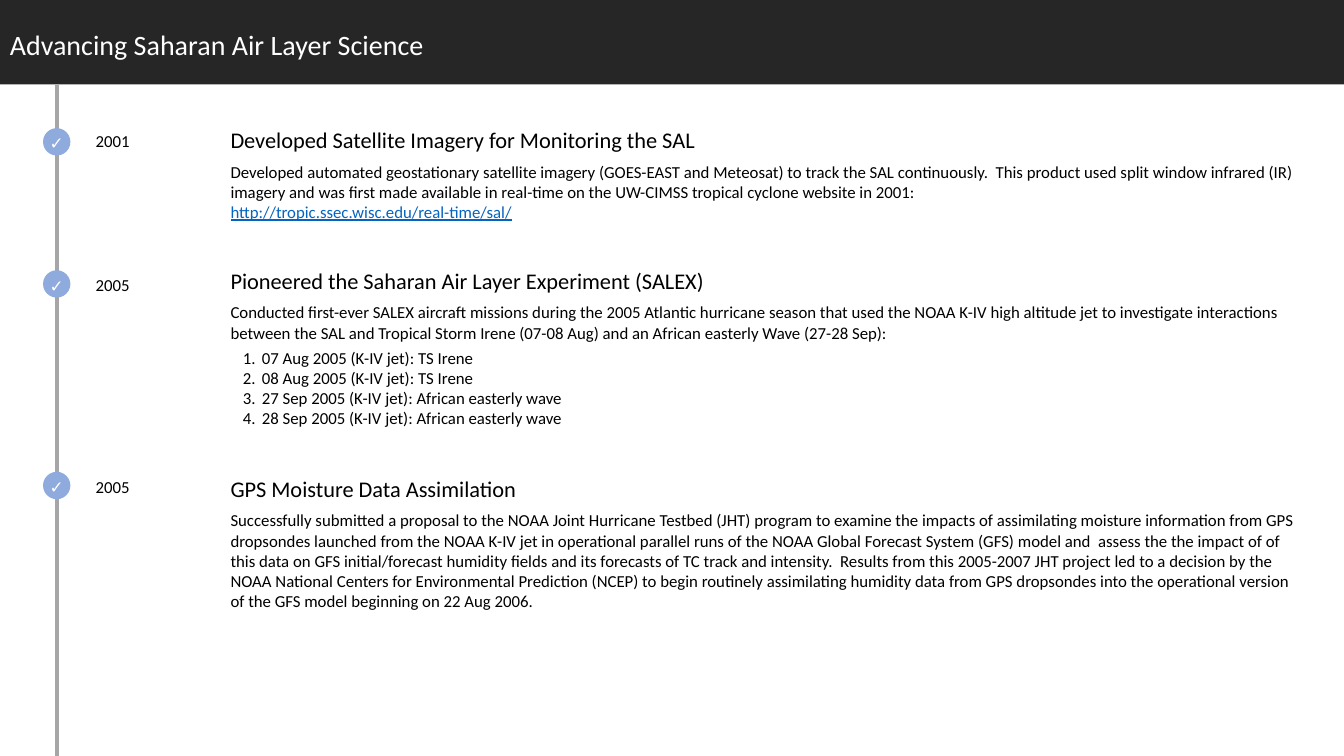
from pptx import Presentation
from pptx.dml.color import RGBColor
from pptx.enum.shapes import MSO_CONNECTOR, MSO_SHAPE
from pptx.enum.text import MSO_ANCHOR, PP_ALIGN
from pptx.oxml.ns import qn
from pptx.util import Cm, Pt
from lxml.etree import SubElement

TITLE = "Advancing Saharan Air Layer Science"

# top, height: story box; marker, year_top: tops of the dot and the year (cm)
MILESTONES = [
    dict(year="2001", top=3.05, height=2.69, marker=3.23, year_top=3.18,
         heading="Developed Satellite Imagery for Monitoring the SAL",
         body="Developed automated geostationary satellite imagery (GOES-EAST and Meteosat) "
              "to track the SAL continuously.  This product used split window infrared (IR) "
              "imagery and was first made available in real-time on the UW-CIMSS tropical "
              "cyclone website in 2001:",
         web="http://tropic.ssec.wisc.edu/real-time/sal/", missions=[]),
    dict(year="2005", top=6.6, height=4.37, marker=6.81, year_top=6.81,
         heading="Pioneered the Saharan Air Layer Experiment (SALEX)",
         body="Conducted first-ever SALEX aircraft missions during the 2005 Atlantic hurricane "
              "season that used the NOAA K-IV high altitude jet to investigate interactions "
              "between the SAL and Tropical Storm Irene (07-08 Aug) and an African easterly "
              "Wave (27-28 Sep):",
         web=None,
         missions=["07 Aug 2005 (K-IV jet): TS Irene",
                   "08 Aug 2005 (K-IV jet): TS Irene",
                   "27 Sep 2005 (K-IV jet): African easterly wave",
                   "28 Sep 2005 (K-IV jet): African easterly wave"]),
    dict(year="2005", top=11.84, height=3.71, marker=11.89, year_top=11.89,
         heading="GPS Moisture Data Assimilation",
         body="Successfully submitted a proposal to the NOAA Joint Hurricane Testbed (JHT) "
              "program to examine the impacts of assimilating moisture information from GPS "
              "dropsondes launched from the NOAA K-IV jet in operational parallel runs of the "
              "NOAA Global Forecast System (GFS) model and  assess the the impact of of this "
              "data on GFS initial/forecast humidity fields and its forecasts of TC track and "
              "intensity.  Results from this 2005-2007 JHT project led to a decision by the "
              "NOAA National Centers for Environmental Prediction (NCEP) to begin routinely "
              "assimilating humidity data from GPS dropsondes into the operational version of "
              "the GFS model beginning on 22 Aug 2006.",
         web=None, missions=[]),
]

THEME = dict(
    font="Calibri",
    header=RGBColor(0x26, 0x26, 0x26), white=RGBColor(0xFF, 0xFF, 0xFF),
    text=RGBColor(0, 0, 0), web=RGBColor(0x05, 0x63, 0xC1),
    dot=RGBColor(0x8F, 0xAA, 0xDC), rail=RGBColor(0xA6, 0xA6, 0xA6),
    title_size=Pt(20), heading_size=Pt(16), body_size=Pt(12),
)

SLIDE_W, SLIDE_H, HEADER_H = 33.87, 19.05, 2.13
RAIL_X, DOT = 1.43, 0.69
YEAR_X, YEAR_W, YEAR_H = 2.16, 1.4, 0.76
STORY_X, STORY_W = 5.56, 27.66


def add_run(p, text, size="body_size", color="text", underline=None):
    r = p.add_run()
    r.text = text
    r.font.name = THEME["font"]
    r.font.size = THEME[size]
    r.font.color.rgb = THEME[color]
    r.font.underline = underline


def add_panel(kind, x, y, w, h, fill):
    sp = s.shapes.add_shape(kind, Cm(x), Cm(y), Cm(w), Cm(h))
    sp.shadow.inherit = False
    sp.fill.solid()
    sp.fill.fore_color.rgb = THEME[fill]
    sp.line.fill.background()
    sp.text_frame.vertical_anchor = MSO_ANCHOR.MIDDLE
    return sp.text_frame


def add_text_box(x, y, w, h, wrap):
    tf = s.shapes.add_textbox(Cm(x), Cm(y), Cm(w), Cm(h)).text_frame
    tf.word_wrap = wrap
    return tf


def number(p):
    pPr = p._p.get_or_add_pPr()
    pPr.set("marL", str(Cm(0.79)))
    pPr.set("indent", str(Cm(-0.48)))
    SubElement(pPr, qn("a:buFont"), typeface="+mj-lt")
    SubElement(pPr, qn("a:buAutoNum"), type="arabicPeriod")


prs = Presentation()
prs.slide_width, prs.slide_height = Cm(SLIDE_W), Cm(SLIDE_H)
s = prs.slides.add_slide(prs.slide_layouts[6])

# Header bar
tf = add_panel(MSO_SHAPE.RECTANGLE, 0, 0, SLIDE_W, HEADER_H, "header")
tf.margin_top = Cm(0.21)
p = tf.paragraphs[0]
p.alignment = PP_ALIGN.LEFT
add_run(p, TITLE, "title_size", "white")

# Timeline rail
rail = s.shapes.add_connector(MSO_CONNECTOR.STRAIGHT, Cm(RAIL_X), Cm(HEADER_H),
                              Cm(RAIL_X), Cm(SLIDE_H))
rail.line.color.rgb = THEME["rail"]
rail.line.width = Pt(2.75)
SubElement(rail._element.spPr, qn("a:effectLst"))

for m in MILESTONES:
    # Check mark dot
    tf = add_panel(MSO_SHAPE.OVAL, RAIL_X - DOT / 2, m["marker"], DOT, DOT, "dot")
    tf.margin_left = tf.margin_right = tf.margin_bottom = 0
    tf.margin_top = Cm(0.07)
    tf.word_wrap = False
    p = tf.paragraphs[0]
    p.alignment = PP_ALIGN.CENTER
    add_run(p, "✓", color="white")

    # Year
    tf = add_text_box(YEAR_X, m["year_top"], YEAR_W, YEAR_H, False)
    add_run(tf.paragraphs[0], m["year"])

    # Heading, description, web address and numbered missions
    tf = add_text_box(STORY_X, m["top"], STORY_W, m["height"], True)
    add_run(tf.paragraphs[0], m["heading"], "heading_size")
    p = tf.add_paragraph()
    p.space_before = Pt(6)
    add_run(p, m["body"])
    if m["web"]:
        add_run(tf.add_paragraph(), m["web"], color="web", underline=True)
    for i, mission in enumerate(m["missions"]):
        p = tf.add_paragraph()
        p.space_before = Pt(0 if i else 3.7)
        number(p)
        add_run(p, mission)

prs.save("out.pptx")
